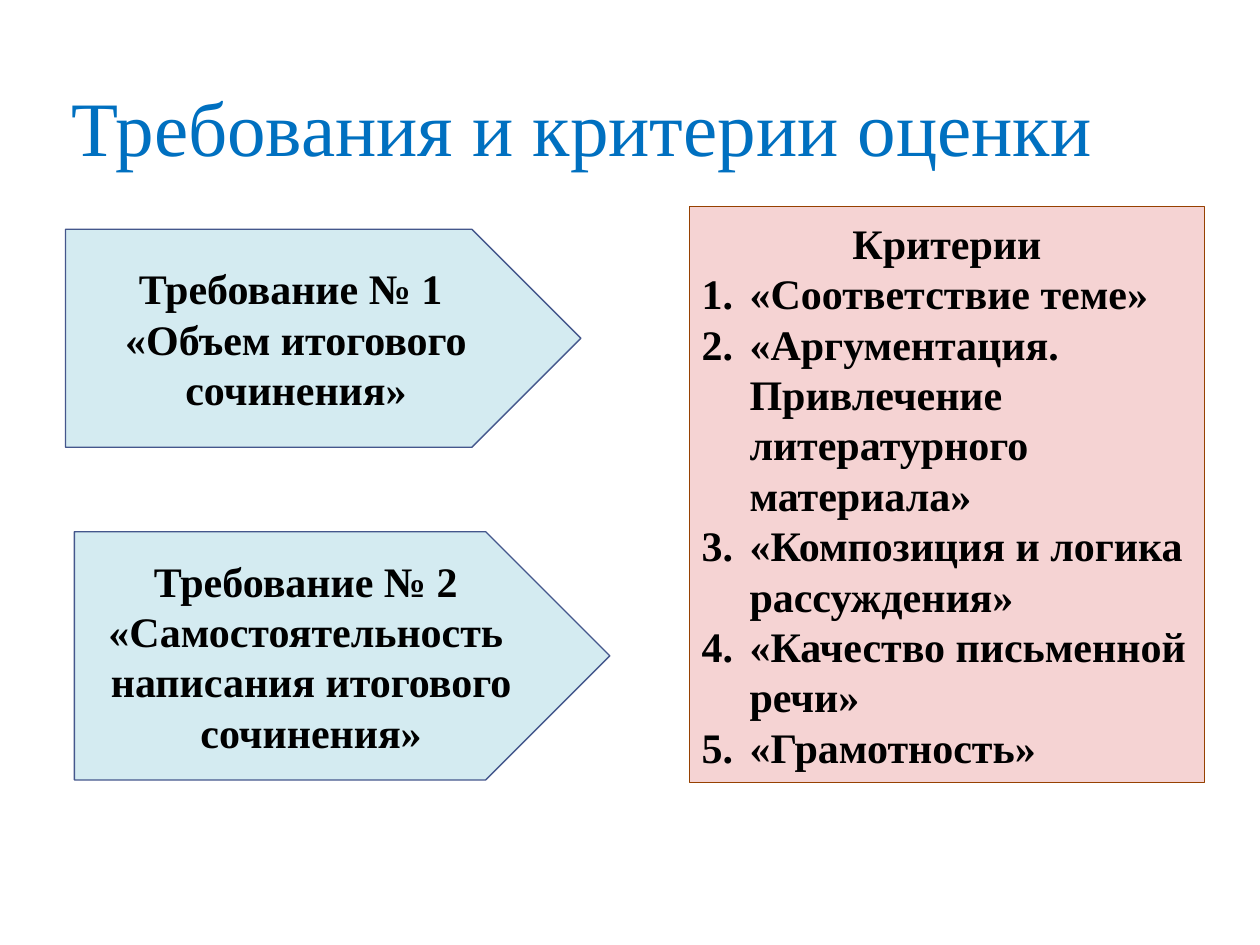
from dataclasses import dataclass

from lxml import etree
from pptx import Presentation
from pptx import util as u
from pptx.dml.color import RGBColor
from pptx.enum import shapes, text
from pptx.oxml.ns import qn


@dataclass(frozen=True)
class Theme:
    font: str = "Times New Roman"
    title_size: int = 44
    body_size: int = 24
    line_width: float = 0.75
    title: str = "0070C0"
    ink: str = "000000"
    requirement_fill: str = "D4EBF1"
    requirement_line: str = "44578C"
    criteria_fill: str = "F5D3D3"
    criteria_line: str = "964101"


class SlideBuilder:
    def __init__(self, page, theme):
        self.page = page
        self.theme = theme

    def add_lines(self, box, lines, size, color, bold):
        """Fill a box with centred paragraphs in one style."""
        frame = box.text_frame
        frame.word_wrap = True
        frame.vertical_anchor = text.MSO_ANCHOR.MIDDLE
        for index, line in enumerate(lines):
            para = frame.add_paragraph() if index else frame.paragraphs[0]
            para.text = line
            para.alignment = text.PP_ALIGN.CENTER
            para.font.name = self.theme.font
            para.font.size = u.Pt(size)
            para.font.bold = bold
            para.font.color.rgb = RGBColor.from_string(color)
        return frame.paragraphs

    def title(self, area, wording):
        box = self.page.shapes.add_textbox(*map(u.Inches, area))
        self.add_lines(box, [wording], self.theme.title_size, self.theme.title, False)

    def panel(self, kind, area, fill, line, lines):
        box = self.page.shapes.add_shape(kind, *map(u.Inches, area))
        box.shadow.inherit = False
        box.fill.solid()
        box.fill.fore_color.rgb = RGBColor.from_string(fill)
        box.line.color.rgb = RGBColor.from_string(line)
        box.line.width = u.Pt(self.theme.line_width)
        return self.add_lines(box, lines, self.theme.body_size, self.theme.ink, True)

    def requirement(self, area, lines):
        self.panel(shapes.MSO_SHAPE.PENTAGON, area, self.theme.requirement_fill,
                   self.theme.requirement_line, lines)

    def criteria(self, area, heading, items):
        paras = self.panel(shapes.MSO_SHAPE.FLOWCHART_PROCESS, area,
                           self.theme.criteria_fill, self.theme.criteria_line,
                           [heading, *items])
        for para in paras[1:]:
            self.number(para)

    def number(self, para, indent=0.38):
        """Turn a paragraph into a left-aligned numbered item."""
        para.alignment = text.PP_ALIGN.LEFT
        properties = para._p.get_or_add_pPr()
        properties.set("marL", str(u.Inches(indent)))
        properties.set("indent", str(-u.Inches(indent)))
        bullet = etree.Element(qn("a:buAutoNum"), type="arabicPeriod")
        properties.insert(0, bullet)


def main():
    deck = Presentation()
    deck.slide_width, deck.slide_height = u.Inches(10), u.Inches(7.5)
    page = deck.slides.add_slide(deck.slide_layouts[6])
    slide = SlideBuilder(page, Theme())

    slide.title((0.12, 0.37, 9, 1.25), "Требования и критерии оценки")
    slide.requirement((0.52, 1.82, 4.09, 1.73),
                      ["Требование № 1 ", "«Объем итогового сочинения»"])
    slide.requirement((0.59, 4.22, 4.25, 1.97),
                      ["Требование № 2 ", "«Самостоятельность ",
                       "написания итогового сочинения»"])
    slide.criteria((5.47, 1.64, 4.09, 4.57), "Критерии", [
        "«Соответствие теме»",
        "«Аргументация. Привлечение литературного материала»",
        "«Композиция и логика рассуждения»",
        "«Качество письменной речи»",
        "«Грамотность»",
    ])
    deck.save("out.pptx")


if __name__ == "__main__":
    main()
